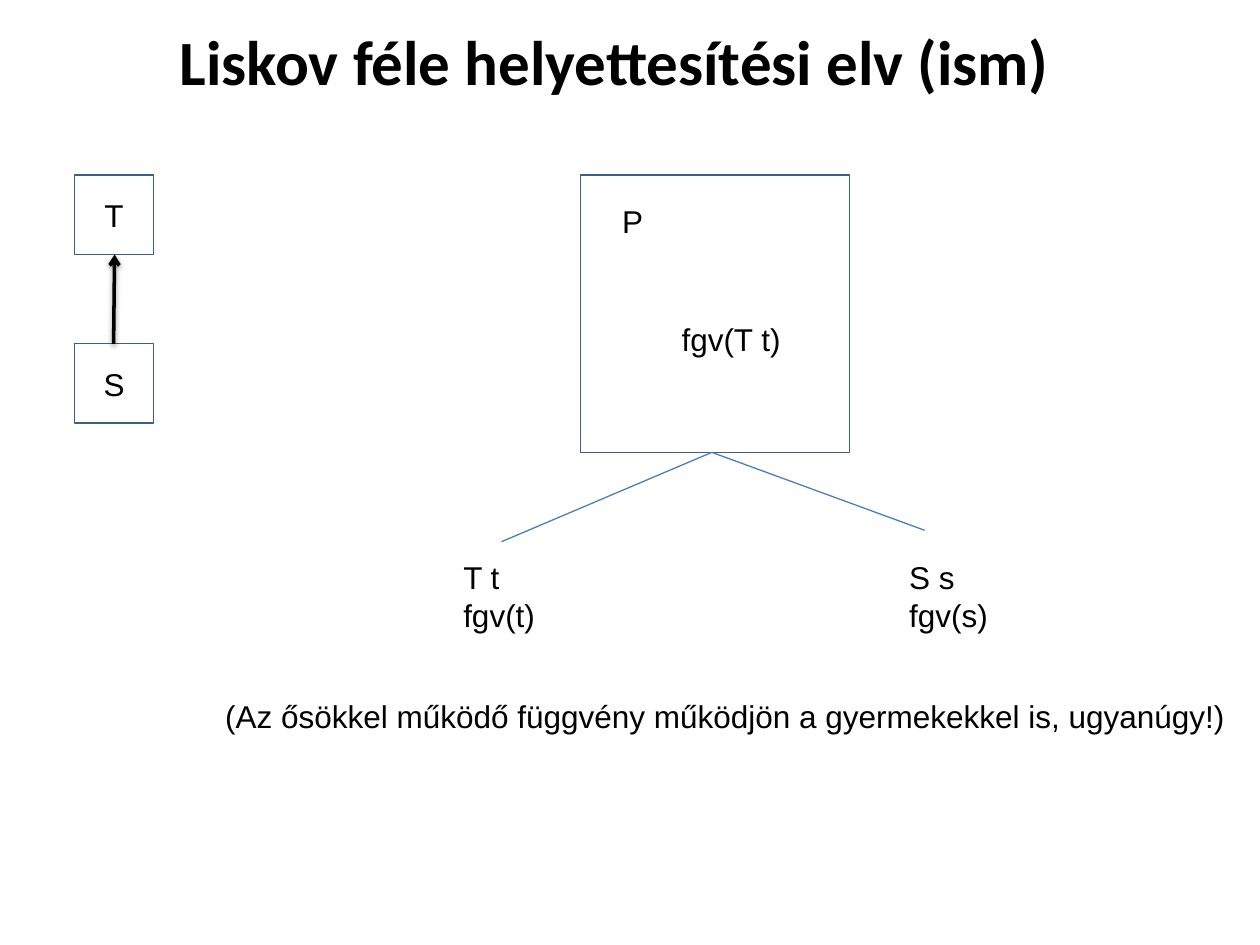
from lxml.etree import SubElement as Sub
from pptx import Presentation
from pptx.dml.color import RGBColor as Rgb
from pptx.enum.shapes import MSO_CONNECTOR as Link, MSO_SHAPE as Form
from pptx.enum.text import MSO_ANCHOR as Anchor, MSO_AUTO_SIZE as Auto, PP_ALIGN as Align
from pptx.oxml.ns import qn
from pptx.util import Cm, Pt

HUE = {"ink": "000000", "paper": "FFFFFF", "edge": "3A5F8C", "branch": "4B7EBC"}


def write(frame, text, size=18, face="Arial", bold=False, align=Align.LEFT):
    frame.text = text
    para = frame.paragraphs[0]
    para.alignment = align
    font = para.font
    font.size, font.name, font.bold = Pt(size), face, bold
    font.color.rgb = Rgb.from_string(HUE["ink"])


def join(start, end, hue, width):
    line = slide.shapes.add_connector(Link.STRAIGHT, *map(Cm, start + end))
    line.line.color.rgb = Rgb.from_string(HUE[hue])
    line.line.width = Pt(width)
    effect = Sub(line._element.spPr, qn("a:effectLst"))
    return line, effect


deck = Presentation()
deck.slide_width, deck.slide_height = Cm(25.4), Cm(19.05)
slide = deck.slides.add_slide(deck.slide_layouts[6])

title = slide.shapes.add_textbox(Cm(-0.61), Cm(-0.28), Cm(26), Cm(3)).text_frame
title.word_wrap = True
title.vertical_anchor = Anchor.MIDDLE
write(title, "Liskov féle helyettesítési elv (ism)", 36, "Calibri", True, Align.CENTER)

boxes = [
    ("", 11.71, 3.53, 5.41, 5.59),
    ("T", 1.5, 3.53, 1.6, 1.6),
    ("S", 1.5, 6.93, 1.6, 1.6),
]
for text, *area in boxes:
    box = slide.shapes.add_shape(Form.RECTANGLE, *map(Cm, area))
    box.shadow.inherit = False
    box.fill.solid()
    box.fill.fore_color.rgb = Rgb.from_string(HUE["paper"])
    box.line.color.rgb = Rgb.from_string(HUE["edge"])
    box.line.width = Pt(0.75)
    if text:
        box.text_frame.vertical_anchor = Anchor.MIDDLE
        write(box.text_frame, text, align=Align.CENTER)

labels = [
    ("P", 12.29, 3.94, 0.94, 1.02),
    ("fgv(T t)", 13.49, 6.32, 2.54, 1.02),
    ("T t\vfgv(t)", 9.09, 11.13, 1.98, 1.8),
    ("S s\vfgv(s)", 18.08, 11.13, 2.11, 1.8),
    ("(Az ősökkel működő függvény működjön a gyermekekkel is, ugyanúgy!)",
     4.29, 13.92, 20.85, 1.02),
]
for text, *area in labels:
    frame = slide.shapes.add_textbox(*map(Cm, area)).text_frame
    frame.word_wrap = False
    frame.auto_size = Auto.SHAPE_TO_FIT_TEXT
    write(frame, text)

arrow, effect = join((2.29, 6.93), (2.31, 5.13), "ink", 2)
Sub(arrow.line._get_or_add_ln(), qn("a:tailEnd"), type="arrow")
shade = Sub(effect, qn("a:outerShdw"), blurRad=str(Pt(3.1)), dist=str(Pt(1.6)),
            dir="5400000", rotWithShape="0")
tint = Sub(shade, qn("a:srgbClr"), val=HUE["ink"])
Sub(tint, qn("a:alpha"), val="38000")

for start in [(10.11, 10.92), (18.64, 10.69)]:
    join(start, (14.35, 9.12), "branch", 0.75)

deck.save("out.pptx")
